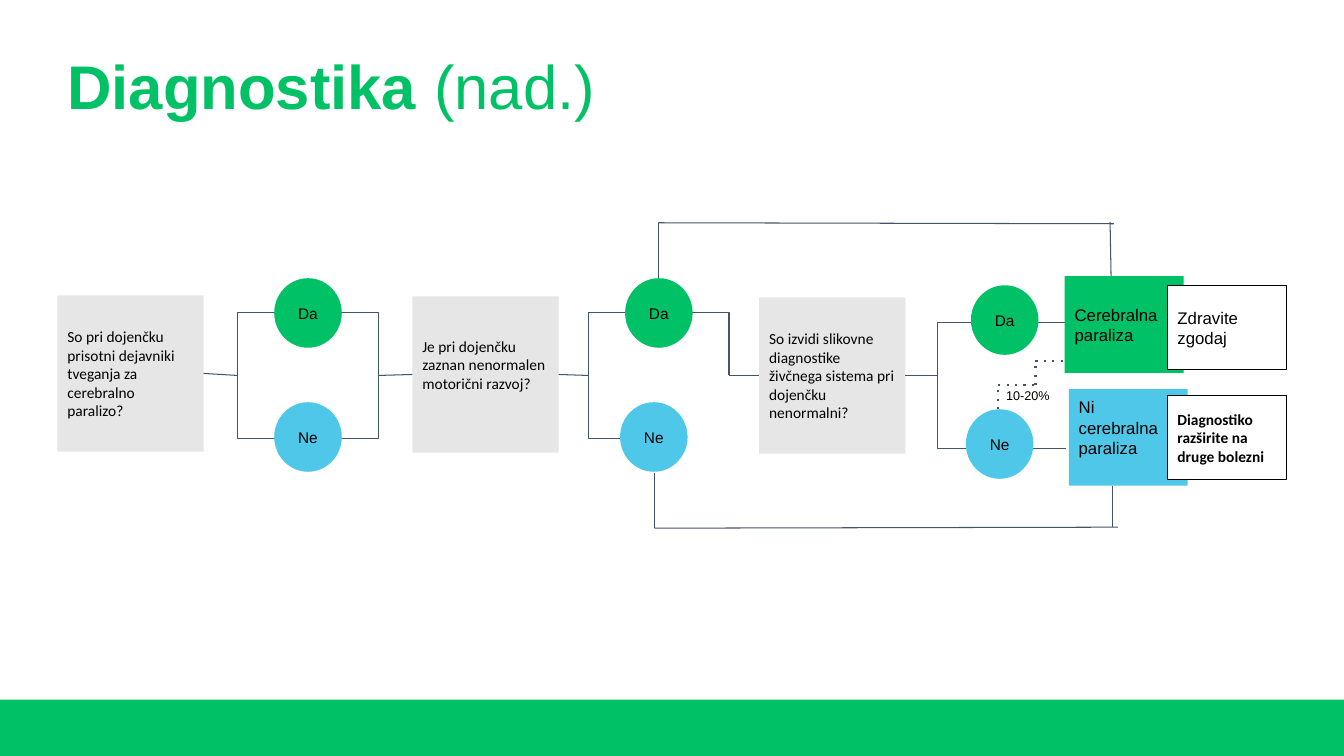
from lxml.etree import SubElement
from pptx import Presentation
from pptx.dml.color import RGBColor
from pptx.enum.dml import MSO_LINE
from pptx.enum.shapes import MSO_CONNECTOR, MSO_SHAPE
from pptx.enum.text import MSO_ANCHOR, PP_ALIGN
from pptx.oxml.ns import qn
from pptx.util import Inches, Pt

GREEN = RGBColor(0x00, 0xC1, 0x65)
BLUE = RGBColor(0x4F, 0xC7, 0xE8)
GRAY = RGBColor(0xE7, 0xE6, 0xE6)
SLATE = RGBColor(0x44, 0x54, 0x6A)
WHITE = RGBColor(0xFF, 0xFF, 0xFF)
BLACK = RGBColor(0, 0, 0)

LOOP_WIDTH, LOOP_HEIGHT = 1.39, 1.25
QUESTION_SIZE = (1.45, 1.55)
CIRCLE_SIZE = (0.67, 0.69)
OUTCOME_SIZE = (1.18, 0.96)
ACTION_SIZE = (1.18, 0.84)


def add_block(page, kind, box, fill=None, line=None):
    block = page.shapes.add_shape(kind, *map(Inches, box))
    block.shadow.inherit = False
    paint(block, fill, line)
    return block


def paint(block, fill, line):
    if fill is None:
        block.fill.background()
    else:
        block.fill.solid()
        block.fill.fore_color.rgb = fill
    if line is None:
        block.line.fill.background()
    else:
        block.line.color.rgb = line
        block.line.width = Pt(0.75)


def write(block, runs, font, size, color=BLACK, align=PP_ALIGN.LEFT, bottom=0.1):
    """Write (text, bold) runs as one paragraph, centred vertically."""
    frame = block.text_frame
    frame.word_wrap = True
    frame.vertical_anchor = MSO_ANCHOR.MIDDLE
    frame.margin_left = frame.margin_right = frame.margin_top = Inches(0.1)
    frame.margin_bottom = Inches(bottom)
    para = frame.paragraphs[0]
    para.alignment = align
    for text, bold in runs:
        span = para.add_run()
        span.text = text
        span.font.name = font
        span.font.size = Pt(size)
        span.font.bold = bold
        span.font.color.rgb = color
    return para


def add_line(page, start, end, dotted=False):
    """Draw a line; each end is an (x, y) point or a (shape, side) pair."""
    glued_start, glued_end = (not isinstance(e[0], (int, float)) for e in (start, end))
    first = (0, 0) if glued_start else start
    last = (0, 0) if glued_end else end
    line = page.shapes.add_connector(MSO_CONNECTOR.STRAIGHT, *map(Inches, (*first, *last)))
    if glued_start:
        line.begin_connect(*start)
    if glued_end:
        line.end_connect(*end)
    line.line.color.rgb = SLATE
    line.line.width = Pt(1.5 if dotted else 0.75)
    properties = line._element.spPr
    if dotted:
        line.line.dash_style = MSO_LINE.ROUND_DOT
        properties.find(".//" + qn("a:prstDash")).set("val", "dot")
    SubElement(properties, qn("a:effectLst"))


def add_polyline(page, points):
    corners = [(Inches(x), Inches(y)) for x, y in points]
    builder = page.shapes.build_freeform(*corners[0], scale=1.0)
    builder.add_line_segments(corners[1:], close=False)
    outline = builder.convert_to_shape()
    outline.shadow.inherit = False
    paint(outline, None, SLATE)


def add_title(page, box):
    title = page.shapes.add_textbox(*map(Inches, box))
    para = write(title, [("Diagnostika ", True), ("(nad.)", False)], "Arial", 44, GREEN, bottom=0.05)
    title.text_frame.margin_top = Inches(0.05)
    para.line_spacing = 0.9


def add_question(page, left, top, text, bottom=0.1):
    question = add_block(page, MSO_SHAPE.RECTANGLE, (left, top, *QUESTION_SIZE), GRAY)
    write(question, [(text, False)], "Calibri", 11, bottom=bottom)
    return question


def add_answers(page, left, top, shift=0):
    """Place the yes circle at left, top and the no circle below it."""
    for text, fill, x, y in (("Da", GREEN, left, top), ("Ne", BLUE, left - shift, top + 1.23)):
        circle = add_block(page, MSO_SHAPE.OVAL, (x, y, *CIRCLE_SIZE), fill)
        write(circle, [(text, False)], "Arial", 11, align=PP_ALIGN.CENTER)


def add_risk_step(page, left, top):
    """Return the closed loop, which leads on to the next question."""
    question = add_question(page, left, top,
                            "So pri dojenčku prisotni dejavniki tveganja za cerebralno paralizo?")
    loop = add_block(page, MSO_SHAPE.RECTANGLE,
                     (left + 1.79, top + 0.17, LOOP_WIDTH, LOOP_HEIGHT), line=SLATE)
    add_answers(page, left + 2.15, top - 0.17)
    add_line(page, (question, 3), (loop, 1))
    return loop


def add_motor_step(page, left, top, previous):
    """Return the point where the yes branch leaves for the next question."""
    question = add_question(page, left, top,
                            "Je pri dojenčku zaznan nenormalen motorični razvoj?", bottom=0.3)
    add_line(page, (previous, 3), (question, 1))
    x, y = left + 1.75, top + 0.16
    right, middle, base = x + LOOP_WIDTH, y + LOOP_HEIGHT / 2, y + LOOP_HEIGHT
    add_polyline(page, [(right, middle), (right, y), (x, y), (x, base), (x + 0.4, base)])
    add_line(page, (question, 3), (x, middle))
    add_answers(page, x + 0.36, y - 0.34, shift=0.05)
    return right, middle


def add_imaging_step(page, left, top, previous):
    question = add_question(
        page, left, top,
        "So izvidi slikovne diagnostike živčnega sistema pri dojenčku nenormalni?")
    add_line(page, previous, (question, 1))
    x, y = left + 1.77, top + 0.25
    base = y + LOOP_HEIGHT
    add_polyline(page, [(x + 1.27, y), (x, y), (x, base), (x + 1.27, base)])
    add_line(page, (question, 3), (x, top + 0.775))
    add_answers(page, x + 0.33, y - 0.37, shift=0.05)


def add_bypasses(page):
    """Lead the motor answers straight to the outcomes, above and below."""
    for route in ([(6.53, 2.76), (6.53, 2.21), (11.05, 2.22)],
                  [(6.49, 4.69), (6.49, 5.24), (11.09, 5.23)]):
        for start, end in zip(route, route[1:]):
            add_line(page, start, end)
    add_line(page, (11.01, 2.2), (11.02, 2.74))
    add_line(page, (11.03, 5.23), (11.03, 4.82))


def add_outcomes(page, left, top):
    for text, fill, x, y, bottom in (
            ("Ni cerebralna paraliza", BLUE, left + 0.04, top + 1.12, 0.3),
            ("Cerebralna paraliza", GREEN, left, top, 0.1)):
        outcome = add_block(page, MSO_SHAPE.RECTANGLE, (x, y, *OUTCOME_SIZE), fill)
        write(outcome, [(text, False)], "Arial", 12, bottom=bottom)
    for text, font, size, bold, y in (
            ("Diagnostiko razširite na druge bolezni", "Calibri", 11, True, top + 1.18),
            ("Zdravite zgodaj", "Arial", 12, False, top + 0.09)):
        action = add_block(page, MSO_SHAPE.RECTANGLE, (left + 1.02, y, *ACTION_SIZE), WHITE, BLACK)
        write(action, [(text, bold)], font, size)


def add_exception(page, left, top):
    """Dotted steps from the last no answer up to the palsy outcome."""
    steps = [(left, top + 0.48), (left, top + 0.24), (left + 0.37, top + 0.24),
             (left + 0.37, top), (left + 0.66, top)]
    for start, end in zip(steps, steps[1:]):
        add_line(page, start, end, dotted=True)
    label = page.shapes.add_textbox(*map(Inches, (left - 0.02, top + 0.23, 0.91, 0.23)))
    write(label, [("10-20%", False)], "Arial", 9)


def main():
    deck = Presentation()
    deck.slide_width, deck.slide_height = Inches(13.33), Inches(7.5)
    page = deck.slides.add_slide(deck.slide_layouts[6])
    add_block(page, MSO_SHAPE.RECTANGLE, (0, 6.94, 13.33, 0.56), GREEN)
    add_title(page, (0.57, 0.5, 5.47, 0.78))
    loop = add_risk_step(page, 0.57, 2.93)
    branch = add_motor_step(page, 4.09, 2.94, loop)
    add_imaging_step(page, 7.53, 2.95, branch)
    add_bypasses(page)
    add_outcomes(page, 10.56, 2.74)
    add_exception(page, 9.9, 3.58)
    deck.save("out.pptx")


if __name__ == "__main__":
    main()
